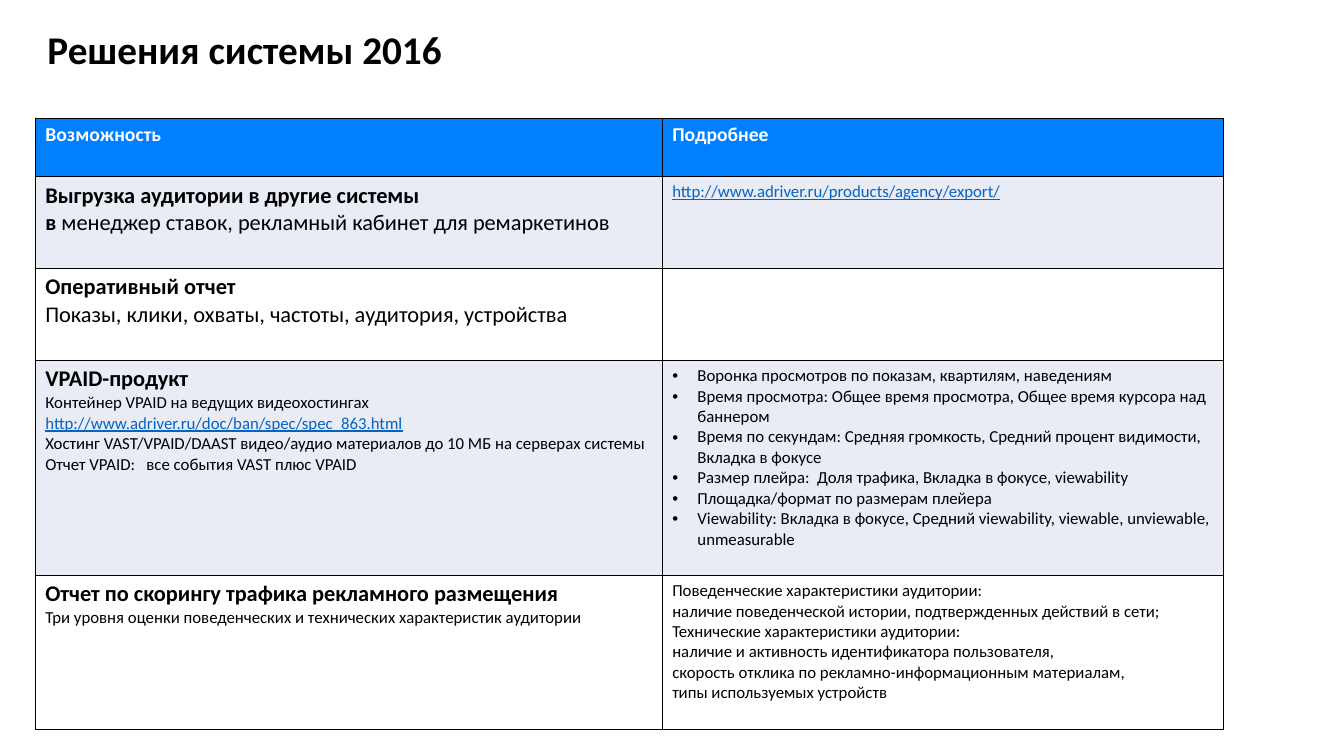
from lxml import etree
from pptx import Presentation
from pptx.dml.color import RGBColor
from pptx.enum.text import MSO_ANCHOR, MSO_AUTO_SIZE, PP_ALIGN
from pptx.oxml.ns import qn
from pptx.util import Pt

LEFT = PP_ALIGN.LEFT
MIDDLE = MSO_ANCHOR.MIDDLE
NO_FIT = MSO_AUTO_SIZE.NONE
TITLE_ONLY = 5

COLORS = {
    "text": "000000",
    "white": "FFFFFF",
    "header": "0080FF",
    "band": "E9EBF5",
    "link": "0563C1",
}

COL_WIDTHS = [447.8, 401]
ROW_HEIGHTS = [42, 65.7, 65.7, 153.6, 110]


def head(text):
    return [(text, {"size": 16, "bold": True})]


def lead(text):
    return [(text, {"size": 16})]


def body(text):
    return [(text, {})]


def link(text):
    return [(text, {"color": "link", "underline": True})]


# Each cell is a list of paragraphs, each paragraph a list of (text, format).
HEADER = ["Возможность", "Подробнее"]
VPAID_METRICS = [
    "Воронка просмотров по показам, квартилям, наведениям",
    "Время просмотра: Общее время просмотра, Общее время курсора над баннером",
    "Время по секундам: Средняя громкость, Средний процент видимости, Вкладка в фокусе",
    "Размер плейра:  Доля трафика, Вкладка в фокусе, viewability",
    "Площадка/формат по размерам плейера",
    "Viewability: Вкладка в фокусе, Средний viewability, viewable, unviewable, unmeasurable",
]
SCORING_DETAILS = [
    "Поведенческие характеристики аудитории:",
    "наличие поведенческой истории, подтвержденных действий в сети;",
    "Технические характеристики аудитории:",
    "наличие и активность идентификатора пользователя,",
    "скорость отклика по рекламно-информационным материалам,",
    "типы используемых устройств",
]
ROWS = [
    [
        [head("Выгрузка аудитории в другие системы"),
         head("в ") + lead("менеджер ставок, рекламный кабинет для ремаркетинов")],
        [link("http://www.adriver.ru/products/agency/export/")],
    ],
    [
        [head("Оперативный отчет"),
         lead("Показы, клики, охваты, частоты, аудитория, устройства")],
        [],
    ],
    [
        [head("VPAID-продукт"),
         body("Контейнер VPAID на ведущих видеохостингах ")
         + link("http://www.adriver.ru/doc/ban/spec/spec_863.html"),
         body("Хостинг VAST/VPAID/DAAST видео/аудио материалов до 10 МБ на серверах системы"),
         body("Отчет VPAID:   все события VAST плюс VPAID")],
        [body(t) for t in VPAID_METRICS],
    ],
    [
        [head("Отчет по скорингу трафика рекламного размещения"),
         body("Три уровня оценки поведенческих и технических характеристик аудитории")],
        [body(t) for t in SCORING_DETAILS],
    ],
]


class Deck:
    font = "Calibri"

    def __init__(self, prs):
        self.s = prs.slides.add_slide(prs.slide_layouts[TITLE_ONLY])

    def text(self, p, text, size=12, bold=False, color="text", underline=False):
        r = p.add_run()
        r.text = text
        f = r.font
        f.name, f.size, f.bold = self.font, Pt(size), bold
        f.underline = underline
        f.color.rgb = RGBColor.from_string(COLORS[color])

    def title(self, text, left, top, width, height):
        sp = self.s.shapes.title
        sp.left, sp.top, sp.width, sp.height = map(Pt, (left, top, width, height))
        tf = sp.text_frame
        tf.word_wrap, tf.auto_size, tf.vertical_anchor = True, NO_FIT, MIDDLE
        p = tf.paragraphs[0]
        p.alignment, p.line_spacing = LEFT, 0.9
        self.text(p, text, size=28, bold=True)

    def table(self, left, top, widths, heights):
        frame = self.s.shapes.add_table(
            len(heights), len(widths), Pt(left), Pt(top), Pt(sum(widths)), Pt(sum(heights)))
        table = frame.table
        table.first_row = table.horz_banding = False
        for col, width in zip(table.columns, widths):
            col.width = Pt(width)
        for row, height in zip(table.rows, heights):
            row.height = Pt(height)
        return table

    def cell(self, cell, paragraphs, fill, bullets=False):
        cell.fill.solid()
        cell.fill.fore_color.rgb = RGBColor.from_string(COLORS[fill])
        self.borders(cell)
        tf = cell.text_frame
        for i, runs in enumerate(paragraphs):
            p = tf.add_paragraph() if i else tf.paragraphs[0]
            if bullets:
                self.bullet(p)
            for text, fmt in runs:
                self.text(p, text, **fmt)

    def borders(self, cell):
        """Draw thin lines on all four sides; they must precede the fill."""
        tcPr = cell._tc.get_or_add_tcPr()
        for i, side in enumerate(("lnL", "lnR", "lnT", "lnB")):
            ln = etree.Element(qn("a:" + side), w=str(Pt(0.25)))
            solid = etree.SubElement(ln, qn("a:solidFill"))
            etree.SubElement(solid, qn("a:srgbClr"), val=COLORS["text"])
            tcPr.insert(i, ln)

    def bullet(self, p):
        pPr = p._p.get_or_add_pPr()
        pPr.set("marL", str(Pt(18)))
        pPr.set("indent", str(-Pt(18)))
        etree.SubElement(pPr, qn("a:buFont"), typeface="Arial")
        etree.SubElement(pPr, qn("a:buChar"), char="•")


def main():
    prs = Presentation()
    prs.slide_width, prs.slide_height = Pt(960), Pt(540)
    deck = Deck(prs)
    deck.title("Решения системы 2016", 26.6, 10.8, 720, 51.8)

    table = deck.table(25.2, 84.2, COL_WIDTHS, ROW_HEIGHTS)
    for c, name in enumerate(HEADER):
        fmt = {"size": 14, "bold": True, "color": "white"}
        deck.cell(table.cell(0, c), [[(name, fmt)]], "header")
    for r, row in enumerate(ROWS, start=1):
        for c, paragraphs in enumerate(row):
            deck.cell(table.cell(r, c), paragraphs, "band" if r % 2 else "white",
                      bullets=(r, c) == (3, 1))
    prs.save("out.pptx")


if __name__ == "__main__":
    main()
